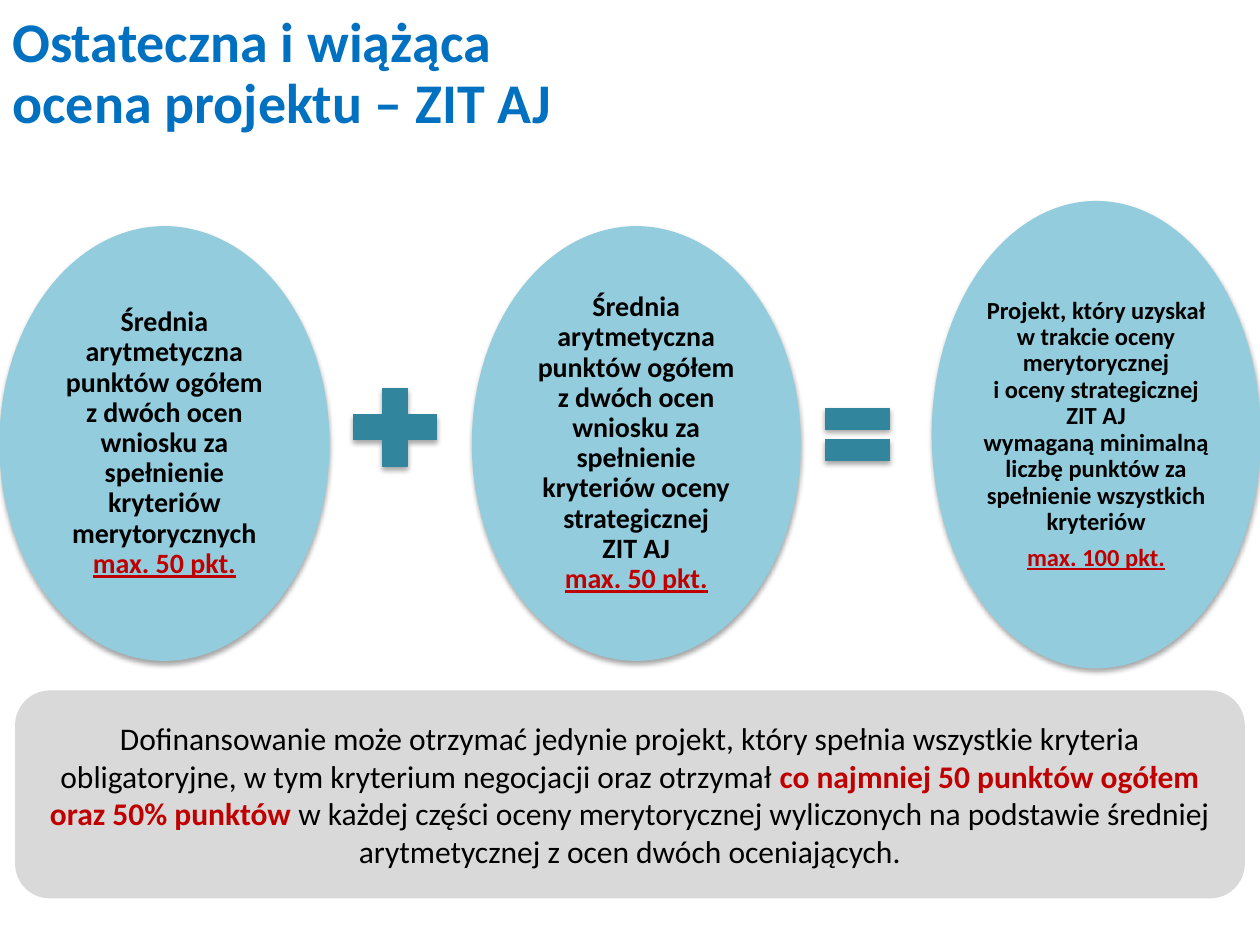
from dataclasses import dataclass

from lxml import etree
from pptx import Presentation
from pptx.dml.color import RGBColor
from pptx.enum import shapes, text
from pptx.oxml.ns import qn
from pptx.util import Inches, Pt

FONT = "Calibri"
COLORS = {
    "title": "0070C0",
    "ellipse": "93CDDD",
    "operator": "31859C",
    "panel": "D9D9D9",
    "text": "000000",
    "accent": "C00000",
}


@dataclass(frozen=True)
class Run:
    text: str
    color: str = "text"
    bold: bool = True
    underline: bool = False


@dataclass(frozen=True)
class Box:
    left: float
    top: float
    width: float
    height: float

    def lengths(self) -> list:
        return [Inches(v) for v in (self.left, self.top, self.width, self.height)]


@dataclass(frozen=True)
class Score:
    box: Box
    size: int
    space_after: int
    paragraphs: tuple[Run, ...]


@dataclass(frozen=True)
class Operator:
    box: Box
    kind: shapes.MSO_SHAPE


def rgb(name: str) -> RGBColor:
    return RGBColor.from_string(COLORS[name])


def write(frame, paragraphs, size: int, align, line_spacing: float = 1.0,
          space_after: int = 0) -> None:
    """Fill a text frame with paragraphs of runs; a newline is a line break."""
    frame.word_wrap = True
    frame.vertical_anchor = text.MSO_ANCHOR.MIDDLE
    for index, runs in enumerate(paragraphs):
        paragraph = frame.paragraphs[0] if index == 0 else frame.add_paragraph()
        paragraph.alignment = align
        paragraph.line_spacing = line_spacing
        paragraph.space_after = Pt(space_after)
        for item in runs:
            for number, line in enumerate(item.text.split("\n")):
                if number:
                    paragraph.add_line_break()
                run = paragraph.add_run()
                run.text = line
                run.font.name = FONT
                run.font.size = Pt(size)
                run.font.bold = item.bold
                run.font.underline = item.underline
                run.font.color.rgb = rgb(item.color)


def add_filled(slide, kind, box: Box, color: str, raised: bool = True):
    """Add a preset shape, with an outline and a soft shadow when raised."""
    shape = slide.shapes.add_shape(kind, *box.lengths())
    shape.fill.solid()
    shape.fill.fore_color.rgb = rgb(color)
    shape.shadow.inherit = False
    if not raised:
        shape.line.fill.background()
        return shape
    shape.line.color.rgb = rgb(color)
    shape.line.width = Pt(0.75)
    effects = shape._element.spPr.find(qn("a:effectLst"))
    shadow = etree.SubElement(
        effects, qn("a:outerShdw"), blurRad=str(Pt(3.1)), dist=str(Pt(1.8)),
        dir="5400000", rotWithShape="0")
    shade = etree.SubElement(shadow, qn("a:srgbClr"), val=COLORS["text"])
    etree.SubElement(shade, qn("a:alpha"), val="35000")
    return shape


def add_score(slide, score: Score) -> None:
    shape = add_filled(slide, shapes.MSO_SHAPE.OVAL, score.box, "ellipse")
    frame = shape.text_frame
    frame.margin_left = frame.margin_right = Inches(0.02)
    frame.margin_top = frame.margin_bottom = Inches(0.02)
    write(frame, [[run] for run in score.paragraphs], score.size,
          text.PP_ALIGN.CENTER, 0.9, score.space_after)


def limit(points: int) -> Run:
    return Run(f"max. {points} pkt.", "accent", underline=True)


SCORES = (
    Score(Box(0, 1.8, 2.61, 3.44), 16, 0, (
        Run("Średnia arytmetyczna punktów ogółem"),
        Run("z dwóch ocen wniosku za spełnienie kryteriów merytorycznych"),
        limit(50))),
    Score(Box(3.75, 1.8, 2.6, 3.44), 16, 0, (
        Run("Średnia\narytmetyczna punktów ogółem"),
        Run("z dwóch ocen wniosku za spełnienie kryteriów oceny strategicznej\nZIT AJ"),
        limit(50))),
    Score(Box(7.4, 1.6, 2.6, 3.7), 14, 5, (
        Run("Projekt, który uzyskał w trakcie oceny merytorycznej\n"
            "i oceny strategicznej\nZIT AJ\nwymaganą minimalną liczbę "
            "punktów za spełnienie wszystkich kryteriów"),
        limit(100))),
)
OPERATORS = (
    Operator(Box(2.69, 2.97, 0.89, 0.84), shapes.MSO_SHAPE.MATH_PLUS),
    Operator(Box(6.46, 3.1, 0.69, 0.7), shapes.MSO_SHAPE.MATH_EQUAL),
)
TITLE = ("Ostateczna i wiążąca", "ocena projektu – ZIT AJ")
CONDITION = (
    Run("Dofinansowanie może otrzymać jedynie projekt, który spełnia wszystkie "
        "kryteria obligatoryjne, w tym kryterium negocjacji oraz otrzymał ", bold=False),
    Run("co najmniej 50 punktów ogółem oraz 50% punktów ", "accent"),
    Run("w każdej części oceny merytorycznej wyliczonych na podstawie średniej "
        "arytmetycznej z ocen dwóch oceniających.", bold=False),
)


def main() -> None:
    presentation = Presentation()
    presentation.slide_width, presentation.slide_height = Inches(10), Inches(7.5)
    slide = presentation.slides.add_slide(presentation.slide_layouts[6])

    # Title
    title = slide.shapes.add_textbox(*Box(0, -0.19, 10, 1.57).lengths())
    write(title.text_frame, [[Run(line, "title")] for line in TITLE], 32,
          text.PP_ALIGN.LEFT, 0.9)

    # Sum of scores
    for score in SCORES:
        add_score(slide, score)
    for operator in OPERATORS:
        add_filled(slide, operator.kind, operator.box, "operator")

    # Funding condition
    panel = add_filled(slide, shapes.MSO_SHAPE.ROUNDED_RECTANGLE,
                       Box(0.12, 5.48, 9.76, 1.65), "panel", raised=False)
    write(panel.text_frame, [CONDITION], 18, text.PP_ALIGN.CENTER)

    presentation.save("out.pptx")


if __name__ == "__main__":
    main()
